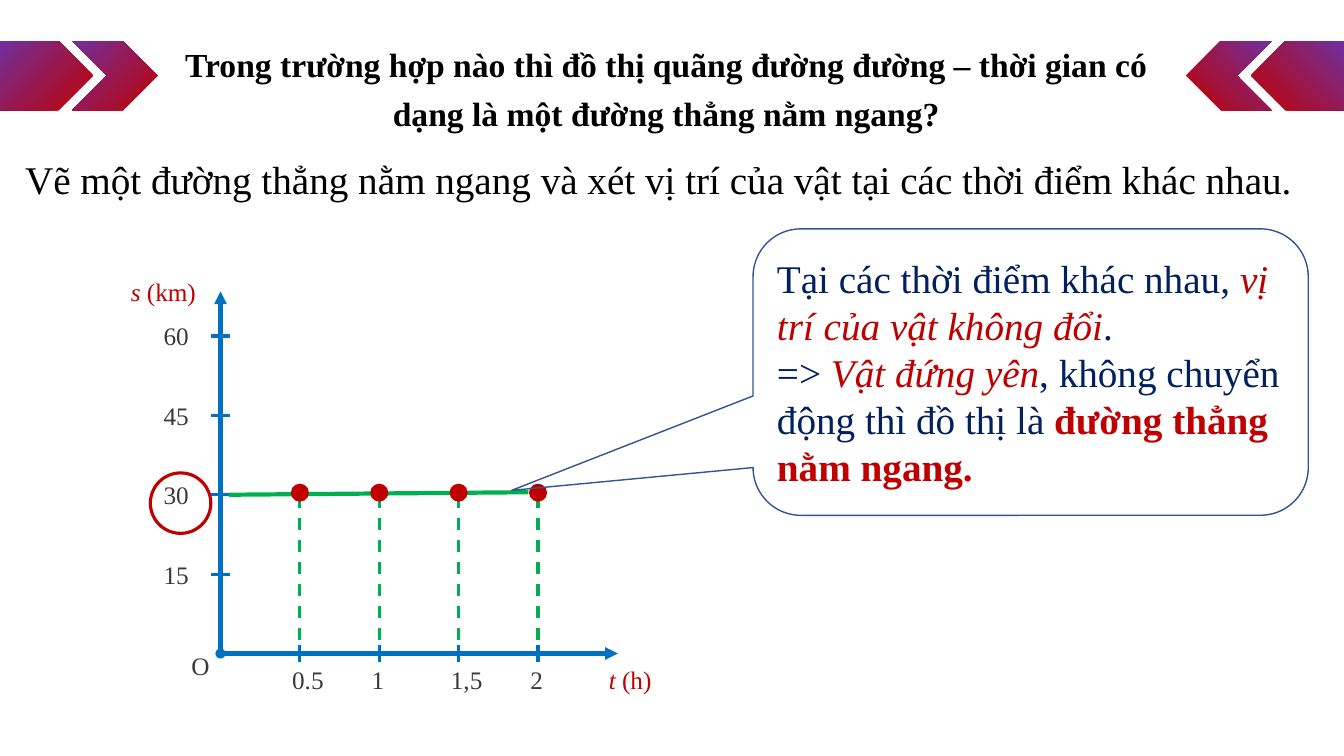
from copy import deepcopy
from dataclasses import dataclass

from lxml.etree import SubElement
from pptx import Presentation
from pptx.dml.color import RGBColor as Color
from pptx.enum.dml import MSO_LINE_DASH_STYLE as Dash
from pptx.enum.shapes import MSO_CONNECTOR as Connector, MSO_SHAPE as Preset
from pptx.enum.text import MSO_ANCHOR as Anchor, MSO_AUTO_SIZE as AutoSize, PP_ALIGN as Align
from pptx.oxml.ns import qn
from pptx.util import Inches, Pt


@dataclass(frozen=True)
class Theme:
    font: str = "Times New Roman"
    title_size: int = 24
    body_size: int = 28
    label_size: int = 18
    black: str = "000000"
    grey: str = "3B3838"
    navy: str = "002060"
    red: str = "C00000"
    plum: str = "9B164A"
    purple: str = "7030A0"
    axis: str = "0070C0"
    green: str = "00B050"
    outline: str = "325491"


THEME = Theme()

# The slide is a grid of 32 columns by 18 rows of square cells
COLUMNS, ROWS = 32, 18
CELL = 7.5 / ROWS

# Graph axes, in cells
ORIGIN_X, ORIGIN_Y, STEP = 5.25, 15.56, 1.89
LEVEL_Y = ORIGIN_Y - 2 * STEP
TIMES = [("0.5", 1.9), ("1", 0.8), ("1,5", 1.4), ("2", 0.8)]
DISTANCES = ["15", "30", "45", "60"]


def cells(*counts):
    return [Inches(count * CELL) for count in counts]


def format_run(run, size, color, bold=False, italic=False):
    font = run.font
    font.name, font.size = THEME.font, Pt(size)
    font.bold, font.italic = bold, italic
    font.color.rgb = Color.from_string(color)


def add_runs(paragraph, size, pieces):
    """Each piece is (text, colour, style), where style holds b or i."""
    for text, color, style in pieces:
        run = paragraph.add_run()
        run.text = text
        format_run(run, size, color, "b" in style, "i" in style)


def add_text(slide, box, size, *pieces):
    shape = slide.shapes.add_textbox(*cells(*box))
    shape.text_frame.word_wrap = True
    add_runs(shape.text_frame.paragraphs[0], size, pieces)


def add_shape(slide, preset, box, fill=None, line=None, width=1):
    shape = slide.shapes.add_shape(preset, *cells(*box))
    shape.shadow.inherit = False
    if fill:
        shape.fill.solid()
        shape.fill.fore_color.rgb = Color.from_string(fill)
    else:
        shape.fill.background()
    if line:
        shape.line.color.rgb = Color.from_string(line)
        shape.line.width = Pt(width)
    else:
        shape.line.fill.background()
    return shape


def add_dot(slide, x, y, diameter, color):
    box = (x - diameter / 2, y - diameter / 2, diameter, diameter)
    add_shape(slide, Preset.OVAL, box, fill=color)


def add_line(slide, start, end, color, width, dashed=False, arrow=False):
    line = slide.shapes.add_connector(Connector.STRAIGHT, *cells(*start, *end))
    line.line.color.rgb = Color.from_string(color)
    line.line.width = Pt(width)
    if dashed:
        line.line.dash_style = Dash.DASH
    properties = line._element.spPr
    if arrow:
        SubElement(properties.find(qn("a:ln")), qn("a:tailEnd"), type="triangle")
    SubElement(properties, qn("a:effectLst"))


def add_ribbon(slide, preset, left, width, mirrored):
    if mirrored:
        left = COLUMNS - left - width
    shape = add_shape(slide, preset, (left, 0.98, width, 1.64))
    shape.fill.gradient()
    shape.fill.gradient_angle = 135
    # Add a third stop between the two default ones
    stop_list = shape._element.spPr.find(qn("a:gradFill")).find(qn("a:gsLst"))
    stop_list.insert(1, deepcopy(stop_list[0]))
    stops = [(0, THEME.red), (0.47, THEME.plum), (1, THEME.purple)]
    for stop, (position, color) in zip(shape.fill.gradient_stops, stops):
        stop.position = position
        stop.color.rgb = Color.from_string(color)
    if mirrored:
        shape._element.spPr.find(qn("a:xfrm")).set("flipH", "1")


def add_title(slide):
    title = slide.shapes.title
    title.left, title.top, title.width, title.height = cells(3.74, 0.72, 24.24, 2.5)
    frame = title.text_frame
    frame.text = "Trong trường hợp nào thì đồ thị quãng đường đường – thời gian có dạng là một đường thẳng nằm ngang?"
    frame.word_wrap = True
    frame.auto_size = AutoSize.NONE
    frame.vertical_anchor = Anchor.TOP
    paragraph = frame.paragraphs[0]
    paragraph.alignment, paragraph.line_spacing = Align.CENTER, 1.22
    paragraph.space_before = Pt(0)
    format_run(paragraph.runs[0], THEME.title_size, THEME.black, bold=True)


def add_axes(slide):
    size, grey, red, blue = THEME.label_size, THEME.grey, THEME.red, THEME.axis
    origin = (ORIGIN_X, ORIGIN_Y)
    add_line(slide, origin, (ORIGIN_X, 6.94), blue, 3, arrow=True)
    add_line(slide, origin, (14.71, ORIGIN_Y), blue, 3, arrow=True)
    add_dot(slide, *origin, 0.24, blue)
    add_text(slide, (4.32, 15.36, 0.8, 0.96), size, ("O", grey, ""))
    add_text(slide, (14.26, 15.7, 1.75, 0.96), size, ("t ", red, "i"), ("(h)", red, ""))
    add_text(slide, (2.88, 6.46, 2.16, 0.96), size, ("s ", red, "i"), ("(km)", red, ""))
    # Time ticks
    for index, (label, width) in enumerate(TIMES, 1):
        x = ORIGIN_X + index * STEP
        add_line(slide, (x, ORIGIN_Y - 0.2), (x, ORIGIN_Y + 0.2), blue, 2.25)
        add_text(slide, (x - 0.42, 15.7, width, 0.96), size, (label, grey, ""))
    # Distance ticks
    for index, label in enumerate(DISTANCES, 1):
        y = ORIGIN_Y - index * STEP
        add_line(slide, (ORIGIN_X - 0.22, y), (ORIGIN_X + 0.22, y), blue, 2.25)
        add_text(slide, (3.66, y - 0.48, 1.34, 0.96), size, (label, grey, ""))


def add_motion(slide):
    add_line(slide, (5.45, LEVEL_Y), (12.58, LEVEL_Y - 0.06), THEME.green, 3)
    add_shape(slide, Preset.OVAL, (3.58, 11.26, 1.44, 1.44), line=THEME.red, width=2.25)
    positions = [ORIGIN_X + index * STEP for index in range(1, len(TIMES) + 1)]
    for x in positions:
        add_line(slide, (x, 15.24), (x, LEVEL_Y), THEME.green, 2.25, dashed=True)
    for x in positions:
        add_dot(slide, x, LEVEL_Y - 0.05, 0.43, THEME.red)


def add_callout(slide):
    callout = add_shape(slide, Preset.ROUNDED_RECTANGULAR_CALLOUT,
                        (17.93, 5.45, 13.22, 6.82), line=THEME.outline)
    for index, value in enumerate((-0.935, 0.413, 0.167)):
        callout.adjustments[index] = value
    frame = callout.text_frame
    frame.word_wrap, frame.vertical_anchor = True, Anchor.MIDDLE
    navy, red = THEME.navy, THEME.red
    observation = [("Tại các thời điểm khác nhau, ", navy, ""),
                   ("vị trí của vật không đổi", red, "i"), (".", navy, "")]
    conclusion = [("=> ", navy, ""), ("Vật đứng yên", red, "i"),
                  (", không chuyển động thì đồ thị là ", navy, ""),
                  ("đường thẳng nằm ngang.", red, "b")]
    for paragraph, pieces in ((frame.paragraphs[0], observation),
                              (frame.add_paragraph(), conclusion)):
        paragraph.alignment = Align.LEFT
        add_runs(paragraph, THEME.body_size, pieces)


def main():
    presentation = Presentation()
    presentation.slide_width, presentation.slide_height = cells(COLUMNS, ROWS)
    slide = presentation.slides.add_slide(presentation.slide_layouts[5])
    # Heading between mirrored ribbons
    for mirrored in (False, True):
        add_ribbon(slide, Preset.PENTAGON, 0, 2.21, mirrored)
        add_ribbon(slide, Preset.CHEVRON, 1.73, 2.02, mirrored)
    add_title(slide)
    add_text(slide, (0.36, 3.58, 31.3, 1.37), THEME.body_size,
             ("Vẽ một đường thẳng nằm ngang và xét vị trí của vật tại các thời điểm khác nhau.",
              THEME.black, ""))
    # Graph and its explanation
    add_axes(slide)
    add_motion(slide)
    add_callout(slide)
    presentation.save("out.pptx")


if __name__ == "__main__":
    main()
